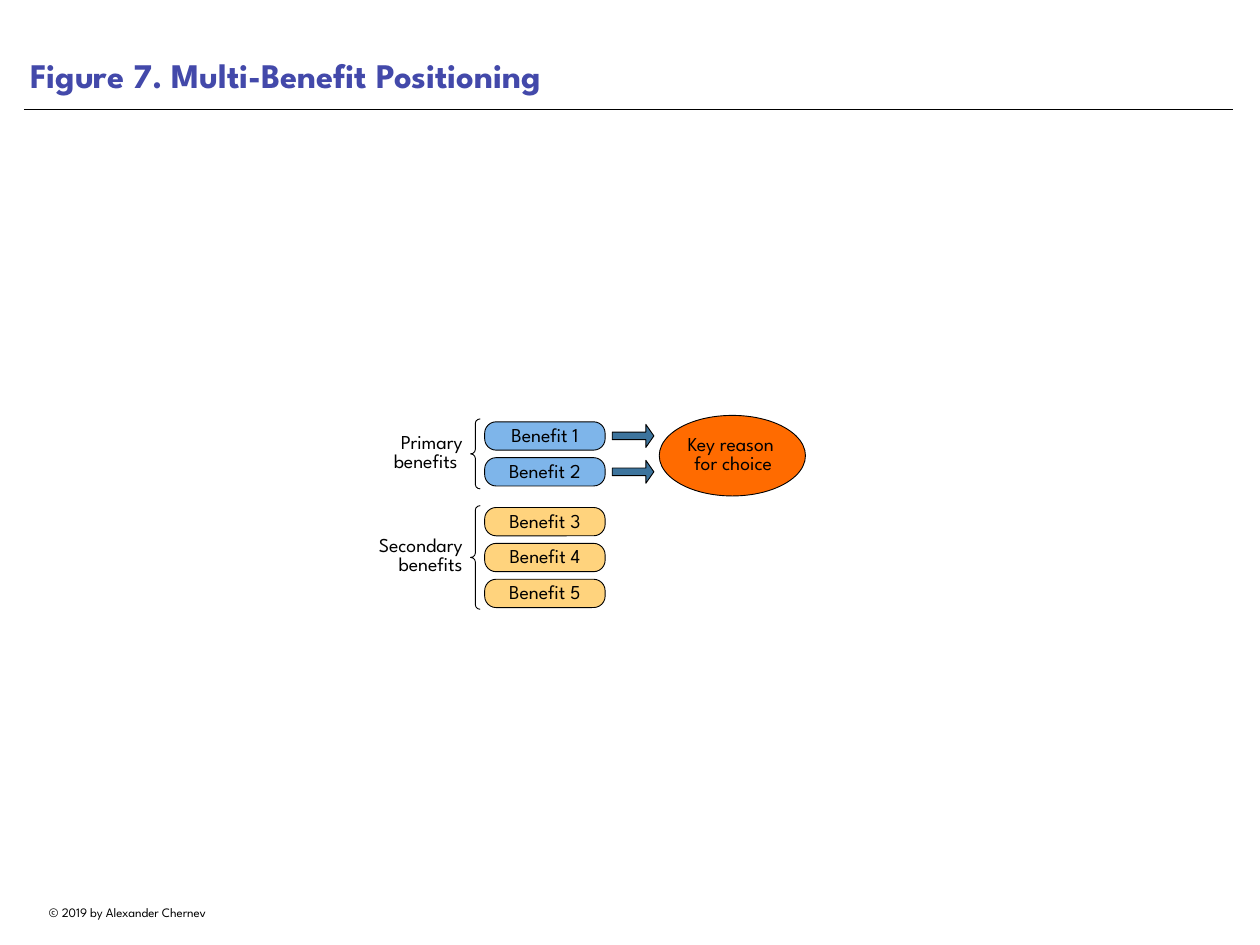
from lxml import etree
from pptx import Presentation
from pptx.dml.color import RGBColor
from pptx.enum.shapes import MSO_CONNECTOR, MSO_SHAPE
from pptx.enum.text import MSO_ANCHOR, PP_ALIGN
from pptx.oxml.ns import qn
from pptx.util import Inches, Pt

LEFT, CENTER, RIGHT = PP_ALIGN.LEFT, PP_ALIGN.CENTER, PP_ALIGN.RIGHT
TOP, MIDDLE, BOTTOM = MSO_ANCHOR.TOP, MSO_ANCHOR.MIDDLE, MSO_ANCHOR.BOTTOM
ELLIPSE, PILL = MSO_SHAPE.OVAL, MSO_SHAPE.ROUNDED_RECTANGLE
ARROW, BRACE = MSO_SHAPE.RIGHT_ARROW, MSO_SHAPE.LEFT_BRACE
STRAIGHT = MSO_CONNECTOR.STRAIGHT

FONT = "League Spartan"
COLORS = {
    "ink": "000000",
    "title": "4349AA",
    "primary": "7EB5EA",
    "secondary": "FFD37D",
    "arrow": "3D749D",
    "reason": "FF6B00",
}
PILL_PITCH = 0.405
PILL_HEIGHT = 0.32


def color(name):
    return RGBColor.from_string(COLORS[name])


def write_text(shape, text, size=16, ink="ink", bold=False, align=CENTER,
               anchor=MIDDLE, spacing=1.0, inset=0, wrap=True):
    frame = shape.text_frame
    frame.word_wrap = wrap
    frame.vertical_anchor = anchor
    frame.margin_left = frame.margin_right = Inches(inset)
    frame.margin_top = frame.margin_bottom = Inches(inset)
    paragraph = frame.paragraphs[0]
    paragraph.text = text
    paragraph.alignment = align
    paragraph.line_spacing = spacing
    for run in paragraph.runs:
        run.font.name = FONT
        run.font.size = Pt(size)
        run.font.bold = bold
        run.font.color.rgb = color(ink)


def add_text(slide, box, text, **text_format):
    shape = slide.shapes.add_textbox(*map(Inches, box))
    write_text(shape, text, **text_format)


def add_outlined(slide, kind, box, fill=None, adjustments=()):
    shape = slide.shapes.add_shape(kind, *map(Inches, box))
    shape.shadow.inherit = False
    if fill:
        shape.fill.solid()
        shape.fill.fore_color.rgb = color(fill)
    else:
        shape.fill.background()
    shape.line.color.rgb = color("ink")
    shape.line.width = Pt(0.75)
    for index, value in enumerate(adjustments):
        shape.adjustments[index] = value
    return shape


def add_header(slide, left, top, width, height):
    add_text(slide, (left, top, width, height - 0.09),
             "Figure 7. Multi-Benefit Positioning", size=28, ink="title",
             bold=True, align=LEFT, anchor=BOTTOM, inset=0.07)
    rule = slide.shapes.add_connector(
        STRAIGHT, *map(Inches, (left, top + height, left + width, top + height)))
    rule.line.color.rgb = color("ink")
    rule.line.width = Pt(0.5)
    etree.SubElement(rule._element.spPr, qn("a:effectLst"))


def add_benefit_group(slide, left, top, width, height, label, numbers, fill,
                      arrows=False):
    add_text(slide, (left, top + height / 2 - 0.31, 1.31, 0.6), label,
             align=RIGHT, spacing=0.8)
    add_outlined(slide, BRACE, (left + 1.4, top, 0.11, height),
                 adjustments=(0.45, 0.5))
    pill_left = left + 1.56
    pill_width = width - 1.56
    stack_height = PILL_PITCH * (len(numbers) - 1) + PILL_HEIGHT
    first_top = top + (height - stack_height) / 2
    for row, number in enumerate(numbers):
        pill_top = first_top + row * PILL_PITCH
        pill = add_outlined(slide, PILL,
                            (pill_left, pill_top, pill_width, PILL_HEIGHT),
                            fill, (0.406,))
        write_text(pill, f"Benefit {number}", spacing=0.9)
        if arrows:
            add_outlined(slide, ARROW,
                         (left + width + 0.08, pill_top + 0.03, 0.47, 0.26),
                         "arrow", (0.329, 0.347))


def add_key_reason(slide, left, top, width, height):
    add_outlined(slide, ELLIPSE, (left, top, width, height), "reason")
    add_text(slide, (left + 0.03, top + 0.11, width - 0.04, height - 0.23),
             "Key reason \vfor choice", spacing=0.8)


def add_footer(slide, left, top, width, height):
    add_text(slide, (left, top, width, height), "© 2019 by Alexander Chernev",
             size=10.5, anchor=TOP, inset=0.05, wrap=False)


def main():
    presentation = Presentation()
    presentation.slide_width = Inches(14.22)
    presentation.slide_height = Inches(10.67)
    slide = presentation.slides.add_slide(presentation.slide_layouts[6])
    add_footer(slide, 0.27, 10.16, 2.34, 0.28)
    add_header(slide, 0.27, 0, 13.65, 1.24)
    add_key_reason(slide, 7.44, 4.69, 1.65, 0.91)
    add_benefit_group(slide, 3.91, 4.73, 2.92, 0.79, "Primary benefits ",
                      (1, 2), "primary", arrows=True)
    add_benefit_group(slide, 3.91, 5.71, 2.92, 1.17, "Secondary benefits",
                      (3, 4, 5), "secondary")
    presentation.save("out.pptx")


if __name__ == "__main__":
    main()
